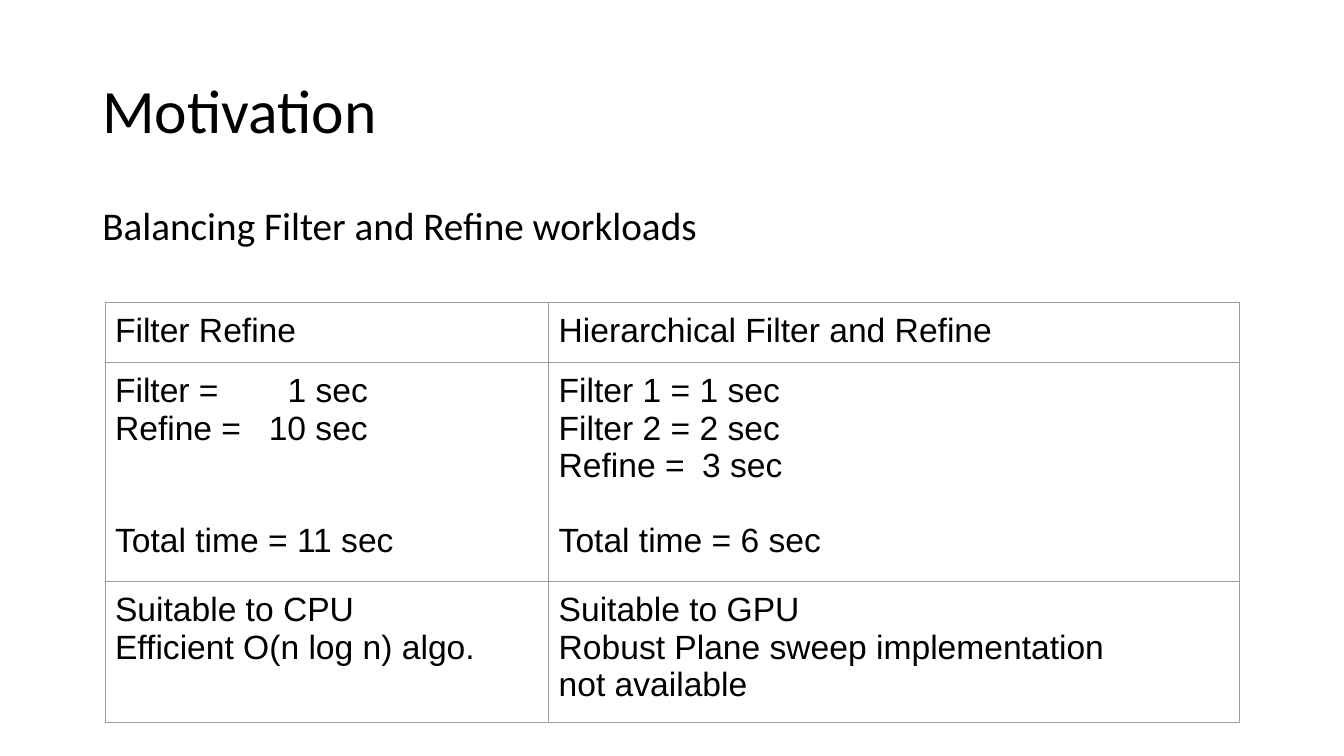
from lxml import etree
from pptx import Presentation
from pptx import util as u
from pptx.dml.color import RGBColor
from pptx.enum import text
from pptx.oxml import ns

COLOURS = {"ink": "000000", "grid": "9E9E9E"}
LINE_PT = 26.8

COLUMN_WIDTHS = [11.18, 17.4]
ROW_HEIGHTS = [1.46, 5.22, 3.33]
TAB_STOPS = [6.37, 5.64]
TABLE_ROWS = [
    (["Filter Refine"], ["Hierarchical Filter and Refine"]),
    (
        ["Filter =\t1 sec", "Refine =\t10 sec", "Total time = 11 sec"],
        ["Filter 1 = 1 sec", "Filter 2 = 2 sec", "Refine =\t3 sec", "Total time = 6 sec"],
    ),
    (
        ["Suitable to CPU", "Efficient O(n log n) algo."],
        ["Suitable to GPU", "Robust Plane sweep implementation", "not available"],
    ),
]
TIMING_LINES = 5


def write(para, content, size, font, spacing=None, before=0):
    para.line_spacing = spacing
    para.space_before = u.Pt(before)
    span = para.add_run()
    span.text = content
    span.font.size = u.Pt(size)
    span.font.name = font
    span.font.color.rgb = RGBColor.from_string(COLOURS["ink"])


def add_text(page, content, left, top, width, height, anchor, **style):
    box = page.shapes.add_textbox(u.Cm(left), u.Cm(top), u.Cm(width), u.Cm(height))
    box.text_frame.word_wrap = True
    box.text_frame.vertical_anchor = anchor
    write(box.text_frame.paragraphs[0], content, **style)


def add_right_tab(para, position):
    tabs = etree.SubElement(para._p.get_or_add_pPr(), ns.qn("a:tabLst"))
    etree.SubElement(tabs, ns.qn("a:tab"), pos=str(u.Cm(position)), algn="r")


def draw_borders(cell):
    properties = cell._tc.get_or_add_tcPr()
    for index, side in enumerate(("lnL", "lnR", "lnT", "lnB")):
        line = etree.Element(ns.qn(f"a:{side}"), w=str(u.Pt(0.75)))
        fill = etree.SubElement(line, ns.qn("a:solidFill"))
        etree.SubElement(fill, ns.qn("a:srgbClr"), val=COLOURS["grid"])
        properties.insert(index, line)


def fill_cell(cell, lines, tab_stop):
    """Write the lines; a total sits on the last line of the timing row."""
    cell.fill.background()
    draw_borders(cell)
    cell.margin_left = cell.margin_right = u.Cm(0.25)
    cell.margin_top = cell.margin_bottom = u.Cm(0.25)
    frame = cell.text_frame
    for index, content in enumerate(lines):
        para = frame.add_paragraph() if index else frame.paragraphs[0]
        is_total = content.startswith("Total")
        gap = (TIMING_LINES - len(lines)) * LINE_PT if is_total else 0
        write(para, content, size=24, font="Arial", before=gap)
        if "\t" in content:
            add_right_tab(para, tab_stop)


def add_comparison(page, left, top):
    frame = page.shapes.add_table(
        len(ROW_HEIGHTS), len(COLUMN_WIDTHS), u.Cm(left), u.Cm(top),
        u.Cm(sum(COLUMN_WIDTHS)), u.Cm(sum(ROW_HEIGHTS)),
    )
    table = frame.table
    table.first_row = table.horz_banding = False
    for column, width in zip(table.columns, COLUMN_WIDTHS):
        column.width = u.Cm(width)
    for row, height, contents in zip(table.rows, ROW_HEIGHTS, TABLE_ROWS):
        row.height = u.Cm(height)
        for cell, lines, tab_stop in zip(row.cells, contents, TAB_STOPS):
            fill_cell(cell, lines, tab_stop)


def main():
    deck = Presentation()
    deck.slide_width, deck.slide_height = u.Cm(33.87), u.Cm(19.05)
    page = deck.slides.add_slide(deck.slide_layouts[6])
    add_text(page, "Motivation", 2.33, 1.01, 29.21, 3.68, text.MSO_ANCHOR.MIDDLE,
             size=44, font="Calibri", spacing=0.9)
    add_text(page, "Balancing Filter and Refine workloads", 2.33, 5.07, 29.21, 12.09,
             text.MSO_ANCHOR.TOP, size=28, font="Calibri", spacing=0.9, before=10)
    add_comparison(page, 2.65, 7.62)
    deck.save("out.pptx")


if __name__ == "__main__":
    main()
